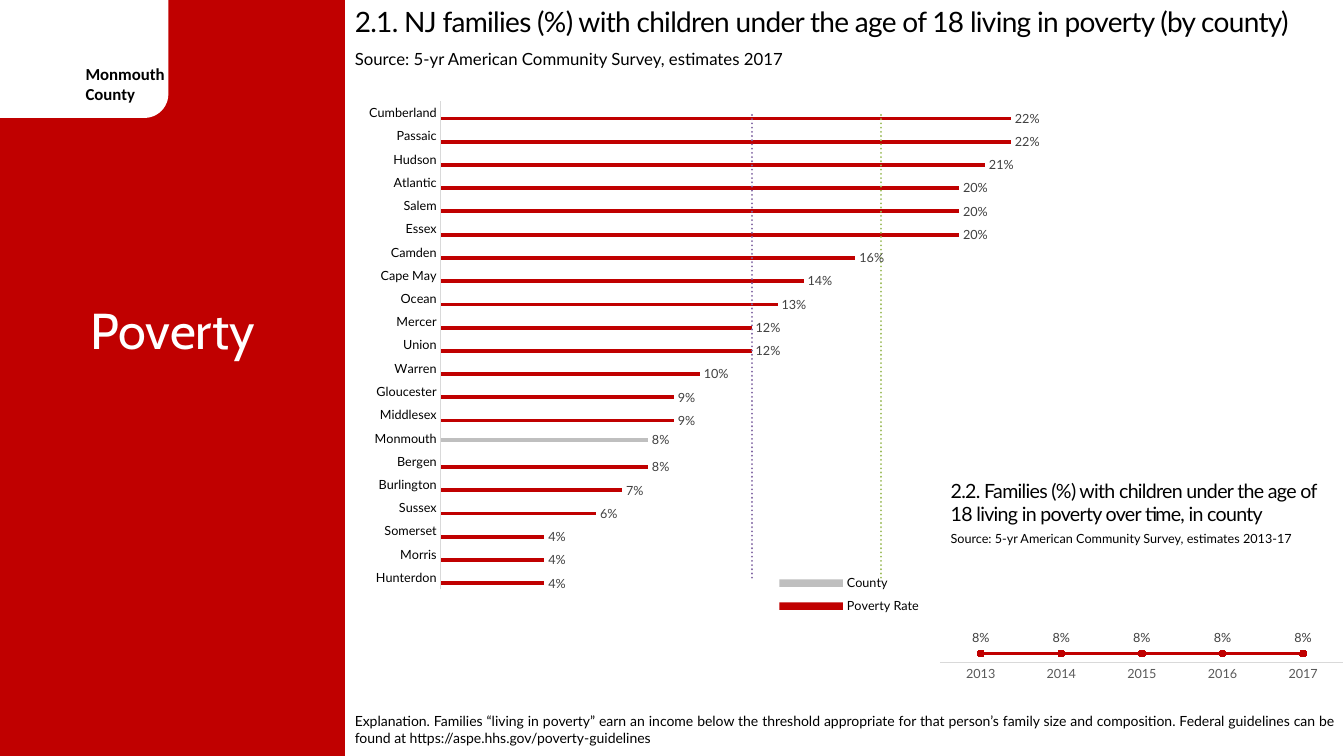
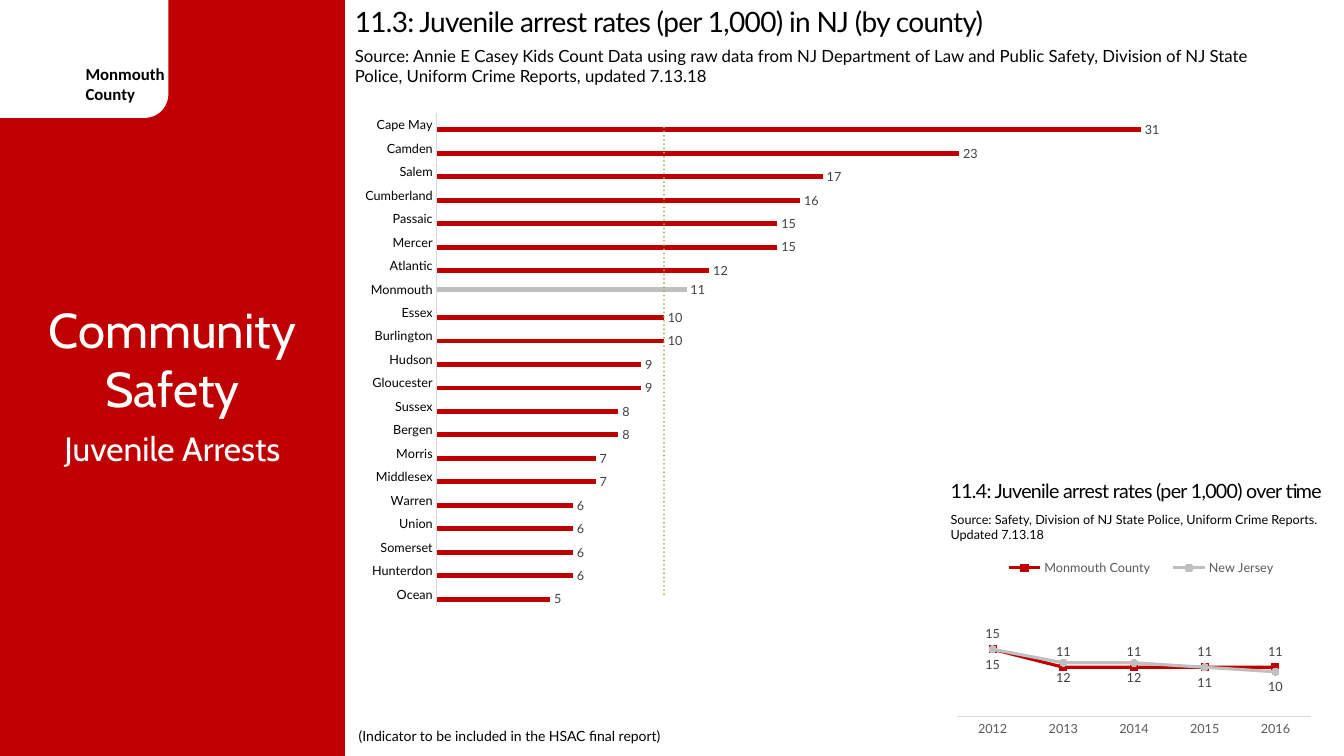
from pptx import Presentation
from pptx.chart.data import CategoryChartData
from pptx.dml.color import RGBColor
from pptx.enum.chart import (XL_CHART_TYPE, XL_LABEL_POSITION, XL_LEGEND_POSITION,
                             XL_MARKER_STYLE, XL_TICK_MARK)
from pptx.enum.shapes import MSO_SHAPE
from pptx.enum.text import MSO_ANCHOR, PP_ALIGN
from pptx.oxml import parse_xml
from pptx.oxml.ns import nsdecls, qn
from pptx.util import Inches, Pt

WIDTH, HEIGHT = 13.33, 7.5
PANEL = 3.42
INSET_LEFT = 9.33
COLORS = {"red": "C00000", "white": "FFFFFF", "black": "000000", "grey": "BFBFBF",
          "rule": "D9D9D9", "label": "404040", "axis": "595959",
          "us": "9BBB59", "nj": "8064A2"}
HOME = "Monmouth"

# Content: text entries are (text, left, top, width, height)
SLIDES = [
    {
        "topic": [("Poverty", 36, 2.92, 0.71)],
        "title": "2.1. NJ families (%) with children under the age of 18 living in poverty (by county)",
        "source": ("Source: 5-yr American Community Survey, estimates 2017", PANEL, 0.43, 7.05, 0.3),
        "footer": ("Explanation. Families “living in poverty” earn an income below the threshold "
                   "appropriate for that person’s family size and composition. Federal guidelines "
                   "can be found at https://aspe.hhs.gov/poverty-guidelines", PANEL, 6.99, 9.91, 0.5),
        "inset_title": ("2.2. Families (%) with children under the age of 18 living in poverty "
                        "over time, in county", INSET_LEFT, 4.7, 3.92, 0.58),
        "inset_source": ("Source: 5-yr American Community Survey, estimates 2013-17",
                         INSET_LEFT, 5.22, 4, 0.25),
        "counties": {
            "box": (3.45, 0.84, 8.22, 5.85), "plot": (0.112, 0.028, 0.782, 0.828),
            "legend": (0.48, 0.82, 0.25, 0.09), "gap": 219, "max": 0.25, "format": "0%",
            "name": "Poverty Rate", "home": "County",
            "references": [("US 17%", 0.17, "us"), ("NJ 12%", 0.12, "nj")],
            "rates": [("Cumberland", 0.22), ("Passaic", 0.22), ("Hudson", 0.21),
                      ("Atlantic", 0.2), ("Salem", 0.2), ("Essex", 0.2), ("Camden", 0.16),
                      ("Cape May", 0.14), ("Ocean", 0.13), ("Mercer", 0.12), ("Union", 0.12),
                      ("Warren", 0.1), ("Gloucester", 0.09), ("Middlesex", 0.09),
                      ("Monmouth", 0.08), ("Bergen", 0.08), ("Burlington", 0.07),
                      ("Sussex", 0.06), ("Somerset", 0.04), ("Morris", 0.04),
                      ("Hunterdon", 0.04)],
        },
        "trend": {
            "box": (9.25, 5.33, 4.08, 1.55), "plot": (0.019, 0.099, 0.981, 0.702),
            "legend": None, "max": 1, "format": "0%",
            "years": ["2013", "2014", "2015", "2016", "2017"],
            "lines": [("Monmouth County", [0.08] * 5, "red", "CIRCLE", "ABOVE")],
        },
    },
    {
        "topic": [("Community Safety", 35, 2.92, 1.28), ("Juvenile Arrests", 24, 4.2, 0.5)],
        "title": "11.3: Juvenile arrest rates (per 1,000) in NJ (by county)",
        "source": ("Source: Annie E Casey Kids Count Data using raw data from NJ Department of Law "
                   "and Public Safety, Division of NJ State Police, Uniform Crime Reports, "
                   "updated 7.13.18", PANEL, 0.4, 9.19, 0.5),
        "footer": ("(Indicator to be included in the HSAC final report)", 3.46, 7.1, 9, 0.4),
        "inset_title": ("11.4: Juvenile arrest rates (per 1,000) over time",
                        INSET_LEFT, 4.7, 3.92, 0.34),
        "inset_source": ("Source: Safety, Division of NJ State Police, Uniform Crime Reports. "
                         "Updated 7.13.18", INSET_LEFT, 5.03, 3.94, 0.4),
        "counties": {
            "box": (3.46, 1.08, 8.89, 5.5), "plot": (0.098, 0.008, 0.887, 0.889),
            "legend": None, "gap": 182, "max": 35, "format": "0",
            "name": "Rate per 1,000 youth", "home": "Monmouth County",
            "references": [("New Jersey", 10, "us")],
            "rates": [("Cape May", 31), ("Camden", 23), ("Salem", 17), ("Cumberland", 16),
                      ("Passaic", 15), ("Mercer", 15), ("Atlantic", 12), ("Monmouth", 11),
                      ("Essex", 10), ("Burlington", 10), ("Hudson", 9), ("Gloucester", 9),
                      ("Sussex", 8), ("Bergen", 8), ("Morris", 7), ("Middlesex", 7),
                      ("Warren", 6), ("Union", 6), ("Somerset", 6), ("Hunterdon", 6),
                      ("Ocean", 5)],
        },
        "trend": {
            "box": (9.33, 5.53, 3.75, 1.89), "plot": (0.044, 0.081, 0.935, 0.756),
            "legend": (0.13, 0, 0.8, 0.11), "max": 32, "format": "0",
            "years": ["2012", "2013", "2014", "2015", "2016"],
            "lines": [("Monmouth County", [15, 11, 11, 11, 11], "red", "SQUARE", "ABOVE"),
                      ("New Jersey", [15, 12, 12, 11, 10], "grey", "CIRCLE", "BELOW")],
        },
    },
]


def rgb(name):
    return RGBColor.from_string(COLORS[name])


def inches(box):
    return [Inches(length) for length in box]


def set_font(font, size, color, face="Lato"):
    font.size, font.name = Pt(size), face
    font.color.rgb = rgb(color)


def add_text(slide, text, left, top, width, height, size, color="black", face="Lato",
             align=PP_ALIGN.LEFT, anchor=MSO_ANCHOR.TOP, bold=False, spacing=0):
    frame = slide.shapes.add_textbox(*inches((left, top, width, height))).text_frame
    frame.word_wrap, frame.vertical_anchor = True, anchor
    frame.text = text
    paragraph = frame.paragraphs[0]
    paragraph.alignment = align
    run = paragraph.runs[0]
    set_font(run.font, size, color, face)
    run.font.bold = bold
    if spacing:
        run.font._element.set("spc", str(spacing))


def add_block(slide, preset, box, color):
    block = slide.shapes.add_shape(preset, *inches(box))
    block.shadow.inherit = False
    block.fill.solid()
    block.fill.fore_color.rgb = rgb(color)
    block.line.fill.background()


def add_side_panel(slide, topic):
    add_block(slide, MSO_SHAPE.RECTANGLE, (0, 0, PANEL, HEIGHT), "red")
    add_block(slide, MSO_SHAPE.ROUNDED_RECTANGLE, (-0.33, -0.25, 2, 1.42), "white")
    add_text(slide, "Monmouth County", 0.75, 0.58, 1.08, 0.5, 12, face="Calibri", bold=True)
    for text, size, top, height in topic:
        add_text(slide, text, 0, top, PANEL, height, size, "white", "Cabin", PP_ALIGN.CENTER)


# Chart helpers
def manual_layout(box, inner=False):
    target = '<c:layoutTarget val="inner"/>' if inner else ""
    modes = "".join(f'<c:{side}Mode val="edge"/>' for side in "xy")
    sizes = "".join(f'<c:{side} val="{share}"/>' for side, share in zip("xywh", box))
    return parse_xml(f'<c:layout {nsdecls("c")}><c:manualLayout>{target}{modes}{sizes}'
                     '</c:manualLayout></c:layout>')


def drop_layout(element):
    for layout in element.findall(qn("c:layout")):
        element.remove(layout)


def add_legend(chart, box, color, hidden=()):
    chart.has_legend = True
    legend = chart.legend
    legend.position = XL_LEGEND_POSITION.RIGHT
    legend.include_in_layout = False
    set_font(legend.font, 9, color)
    element = legend._element
    drop_layout(element)
    position = element.find(qn("c:legendPos"))
    position.addnext(manual_layout(box))
    for index in reversed(hidden):
        position.addnext(parse_xml(f'<c:legendEntry {nsdecls("c")}><c:idx val="{index}"/>'
                                   '<c:delete val="1"/></c:legendEntry>'))


def add_plain_chart(slide, kind, spec, data, axis_color):
    chart = slide.shapes.add_chart(kind, *inches(spec["box"]), data).chart
    chart.has_title = chart.has_legend = False
    set_font(chart.font, 10, "black", "Calibri")
    chart.plots[0].vary_by_categories = False
    category, value = chart.category_axis, chart.value_axis
    category.major_tick_mark = category.minor_tick_mark = XL_TICK_MARK.NONE
    category.has_major_gridlines = False
    set_font(category.tick_labels.font, 9, axis_color)
    category.format.line.color.rgb = rgb("rule")
    category.format.line.width = Pt(0.75)
    value.has_major_gridlines = value.visible = False
    value.minimum_scale, value.maximum_scale = 0, spec["max"]
    plot_area = chart._chartSpace.chart.plotArea
    drop_layout(plot_area)
    plot_area.insert(0, manual_layout(spec["plot"], inner=True))
    return chart


def label_values(series, number_format, position):
    labels = series.data_labels
    labels.show_value = True
    labels.number_format, labels.number_format_is_linked = number_format, False
    labels.position = position
    set_font(labels.font, 9, "label")


def add_reference_line(series, color):
    series.format.fill.background()
    series._element.find(qn("c:cat")).addprevious(parse_xml(
        f'<c:trendline {nsdecls("c", "a")}><c:name>{series.name}</c:name>'
        f'<c:spPr><a:ln w="{Pt(1.5)}" cap="rnd"><a:solidFill><a:srgbClr val="{COLORS[color]}"/>'
        '</a:solidFill><a:prstDash val="sysDot"/></a:ln></c:spPr>'
        '<c:trendlineType val="linear"/><c:dispRSqr val="0"/><c:dispEq val="0"/></c:trendline>'))


def add_county_bars(slide, spec):
    rates = spec["rates"][::-1]
    data = CategoryChartData(number_format=spec["format"])
    data.categories = [county for county, _ in rates]
    data.add_series(spec["name"], [None if c == HOME else rate for c, rate in rates])
    data.add_series(spec["home"], [rate if c == HOME else None for c, rate in rates])
    for name, level, _ in spec["references"]:
        data.add_series(name, [level] * len(rates))
    chart = add_plain_chart(slide, XL_CHART_TYPE.BAR_CLUSTERED, spec, data, "black")
    plot = chart.plots[0]
    plot.gap_width, plot.overlap = spec["gap"], 0
    series = list(plot.series)
    for bars, color in zip(series, ("red", "grey")):
        bars.format.fill.solid()
        bars.format.fill.fore_color.rgb = rgb(color)
        label_values(bars, spec["format"], XL_LABEL_POSITION.OUTSIDE_END)
    for reference, (_, _, color) in zip(series[2:], spec["references"]):
        add_reference_line(reference, color)
    if spec["legend"]:
        add_legend(chart, spec["legend"], "black", hidden=(0, 1))


def add_trend_lines(slide, spec):
    data = CategoryChartData(number_format=spec["format"])
    data.categories = spec["years"]
    for name, values, *_ in spec["lines"]:
        data.add_series(name, values)
    chart = add_plain_chart(slide, XL_CHART_TYPE.LINE_MARKERS, spec, data, "axis")
    for series, (_, _, color, marker, position) in zip(chart.plots[0].series, spec["lines"]):
        series.smooth = False
        series.format.line.color.rgb = rgb(color)
        series.format.line.width = Pt(2.25)
        series.marker.style, series.marker.size = XL_MARKER_STYLE[marker], 5
        series.marker.format.fill.solid()
        series.marker.format.fill.fore_color.rgb = rgb(color)
        series.marker.format.line.color.rgb = rgb(color)
        label_values(series, spec["format"], XL_LABEL_POSITION[position])
    if spec["legend"]:
        add_legend(chart, spec["legend"], "axis")


def main():
    deck = Presentation()
    deck.slide_width, deck.slide_height = inches((WIDTH, HEIGHT))
    for content in SLIDES:
        slide = deck.slides.add_slide(deck.slide_layouts[6])
        add_side_panel(slide, content["topic"])
        add_text(slide, content["title"], PANEL, 0, WIDTH - PANEL, 0.44, 20, spacing=-50)
        add_text(slide, *content["source"], 12)
        add_county_bars(slide, content["counties"])
        add_trend_lines(slide, content["trend"])
        add_text(slide, *content["inset_title"], 14, spacing=-50)
        add_text(slide, *content["inset_source"], 9)
        add_text(slide, *content["footer"], 10, align=PP_ALIGN.JUSTIFY,
                 anchor=MSO_ANCHOR.MIDDLE)
    deck.save("out.pptx")


if __name__ == "__main__":
    main()
